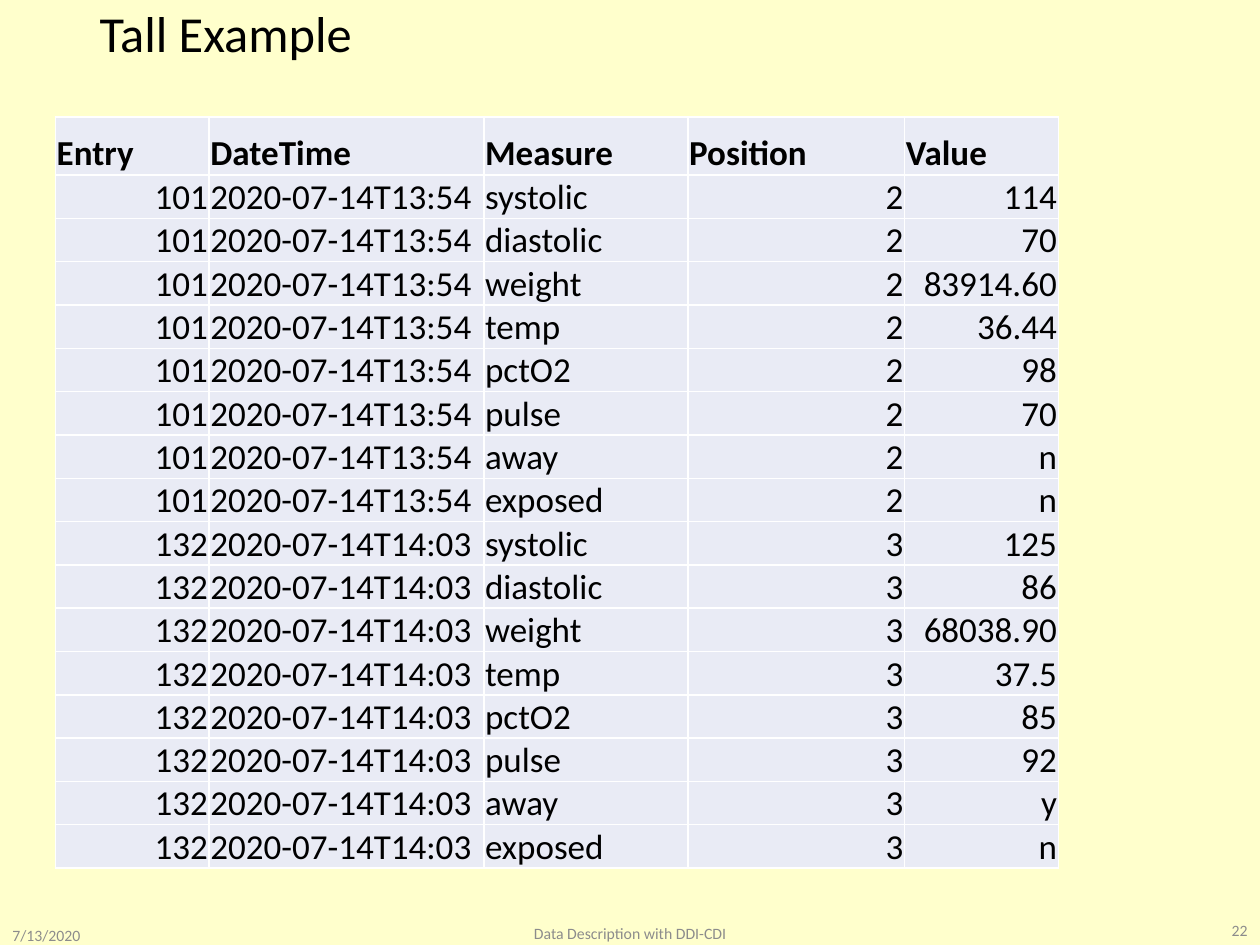
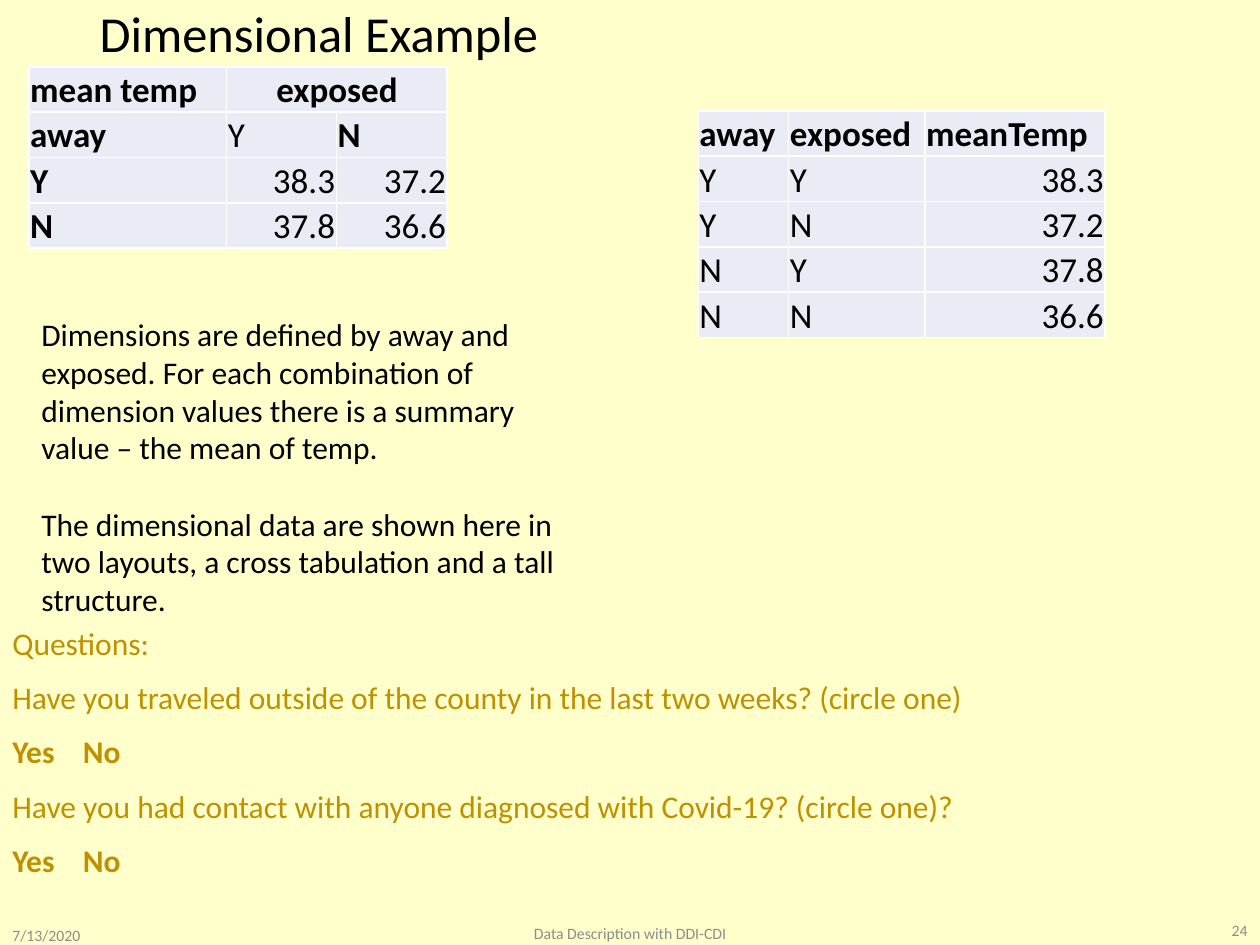
from dataclasses import dataclass
from itertools import product
from typing import Any, Callable, Optional

from lxml.etree import SubElement
from pptx import Presentation
from pptx.dml.color import RGBColor
from pptx.enum.text import MSO_ANCHOR as Anchor, MSO_AUTO_SIZE as AutoSize, PP_ALIGN as Align
from pptx.oxml.ns import qn
from pptx.util import Inches, Pt

FONT = "Calibri"
CREAM, BLACK, GREY, GOLD = "FFFFCC", "000000", "8C8C8C", "BF9000"
CELL_FILL, CELL_BORDER = "E9EBF5", "FFFFFF"
ALIGNMENTS = {"l": Align.LEFT, "c": Align.CENTER, "r": Align.RIGHT}
TITLE_AREA = (0.69, 0.04, 8.62, 0.49)
CELL_FORMAT = {
    "margin_left": Inches(0.01),
    "margin_right": Inches(0.01),
    "margin_top": Inches(0.01),
    "margin_bottom": 0,
    "vertical_anchor": Anchor.BOTTOM,
}
QUESTION_FORMAT = {"line_spacing": 1.07, "space_after": Pt(8)}
ANSWER_TAB = Inches(0.56)

Area = tuple[float, float, float, float]


@dataclass
class Line:
    text: str
    size: float = 18
    color: str = BLACK
    bold: bool = False
    align: str = "l"
    spacing: Optional[dict[str, Any]] = None


@dataclass
class Grid:
    left: float
    top: float
    columns: list[float]
    rows: list[list[str]]
    body_align: str
    row_height: float
    header_height: float
    is_bold: Callable[[int, int], bool] = lambda row, column: row == 0
    header_rows: int = 1
    header_span: Optional[tuple[int, int]] = None


def color_of(code: str) -> RGBColor:
    return RGBColor.from_string(code)


def apply_format(target: Any, values: dict[str, Any]) -> None:
    for name, value in values.items():
        setattr(target, name, value)


def write_line(para: Any, line: Line) -> None:
    apply_format(para, {"alignment": ALIGNMENTS[line.align], **(line.spacing or {})})
    span = para.add_run()
    span.text = line.text
    apply_format(span.font, {"name": FONT, "size": Pt(line.size), "bold": line.bold})
    span.font.color.rgb = color_of(line.color)
    if "\t" in line.text:
        tabs = SubElement(para._p.get_or_add_pPr(), qn("a:tabLst"))
        SubElement(tabs, qn("a:tab"), pos=str(ANSWER_TAB), algn="l")


def write_lines(frame: Any, lines: list[Line]) -> None:
    for index, line in enumerate(lines):
        write_line(frame.add_paragraph() if index else frame.paragraphs[0], line)


def add_text(page: Any, area: Area, lines: list[Line], **frame_format: Any) -> None:
    box = page.shapes.add_textbox(*map(Inches, area))
    apply_format(box.text_frame, {"word_wrap": True, **frame_format})
    write_lines(box.text_frame, lines)


def add_borders(cell: Any) -> None:
    properties = cell._tc.get_or_add_tcPr()
    for side in ("lnL", "lnR", "lnT", "lnB"):
        border = SubElement(properties, qn(f"a:{side}"), w=str(Pt(1)))
        fill = SubElement(border, qn("a:solidFill"))
        SubElement(fill, qn("a:srgbClr"), val=CELL_BORDER)


def add_grid(page: Any, grid: Grid) -> None:
    heights = [grid.header_height] + [grid.row_height] * (len(grid.rows) - 1)
    area = (grid.left, grid.top, sum(grid.columns), sum(heights))
    table = page.shapes.add_table(len(heights), len(grid.columns), *map(Inches, area)).table
    apply_format(table, {"first_row": False, "horz_banding": False})
    for column, width in zip(table.columns, grid.columns):
        column.width = Inches(width)
    for row, height in zip(table.rows, heights):
        row.height = Inches(height)
    if grid.header_span:
        first, last = grid.header_span
        table.cell(0, first).merge(table.cell(0, last))
    for row, column in product(range(len(heights)), range(len(grid.columns))):
        cell = table.cell(row, column)
        apply_format(cell, CELL_FORMAT)
        add_borders(cell)
        cell.fill.solid()
        cell.fill.fore_color.rgb = color_of(CELL_FILL)
        if cell.is_spanned:
            continue
        align = "l" if row < grid.header_rows else grid.body_align[column]
        if cell.is_merge_origin:
            align = "c"
        text = grid.rows[row][column]
        write_line(
            cell.text_frame.paragraphs[0],
            Line(text, 20, bold=grid.is_bold(row, column), align=align),
        )


def add_page(deck: Any, title: str, number: int) -> Any:
    page = deck.slides.add_slide(deck.slide_layouts[5])
    heading = page.shapes.title
    apply_format(heading, dict(zip(("left", "top", "width", "height"), map(Inches, TITLE_AREA))))
    apply_format(
        heading.text_frame,
        {"vertical_anchor": Anchor.MIDDLE, "auto_size": AutoSize.NONE, "word_wrap": True},
    )
    write_lines(heading.text_frame, [Line(title, 28.8, spacing={"line_spacing": 0.9})])
    footers = [
        ((0, 7.35, 1.17, 0.15), "7/13/2020", "l"),
        ((3.31, 7.33, 3.38, 0.15), "Data Description with DDI-CDI", "c"),
        ((9.11, 7.31, 0.89, 0.15), str(number), "r"),
    ]
    for area, text, align in footers:
        add_text(page, area, [Line(text, 9, GREY, align=align)], vertical_anchor=Anchor.MIDDLE)
    return page


def build_tall_page(deck: Any) -> None:
    page = add_page(deck, "Tall Example", 22)
    measures = ["systolic", "diastolic", "weight", "temp", "pctO2", "pulse", "away", "exposed"]
    visits = [
        ("101", "2020-07-14T13:54", "2", ["114", "70", "83914.60", "36.44", "98", "70", "n", "n"]),
        ("132", "2020-07-14T14:03", "3", ["125", "86", "68038.90", "37.5", "85", "92", "y", "n"]),
    ]
    rows = [["Entry", "DateTime", "Measure", "Position", "Value"]]
    for entry, moment, position, values in visits:
        rows += [[entry, moment, measure, position, value]
                 for measure, value in zip(measures, values)]
    add_grid(page, Grid(0.44, 0.93, [1.22, 2.18, 1.62, 1.72, 1.22], rows, "rllrr", 0.32, 0.46))


def build_dimensional_page(deck: Any) -> None:
    page = add_page(deck, "Dimensional Example", 24)
    levels = ["Y", "N"]
    means = [["38.3", "37.2"], ["37.8", "36.6"]]
    cross_rows = [["mean temp", "exposed", ""], ["away", *levels]]
    cross_rows += [[away, *values] for away, values in zip(levels, means)]
    add_grid(page, Grid(
        0.23, 0.53, [1.57, 0.87, 0.88], cross_rows, "lrr", 0.36, 0.36,
        is_bold=lambda row, column: row == 0 or column == 0 or (row, column) == (1, 2),
        header_rows=2, header_span=(1, 2),
    ))
    tall_rows = [["away", "exposed", "meanTemp"]]
    tall_rows += [[away, exposed, value]
                  for away, values in zip(levels, means)
                  for exposed, value in zip(levels, values)]
    add_grid(page, Grid(5.54, 0.88, [0.72, 1.08, 1.43], tall_rows, "llr", 0.36, 0.36))

    explanation = [
        Line("Dimensions are defined by away and exposed. For each combination of dimension "
             "values there is a summary value – the mean of temp.",
             spacing={"space_after": Pt(22)}),
        Line("The dimensional data are shown here in two layouts, a cross tabulation "
             "and a tall structure."),
    ]
    add_text(page, (0.23, 2.45, 4.54, 2.52), explanation, auto_size=AutoSize.SHAPE_TO_FIT_TEXT)

    questions = [Line("Questions:", color=GOLD, spacing=QUESTION_FORMAT)]
    for question in (
        "Have you traveled outside of the county in the last two weeks? (circle one)",
        "Have you had contact with anyone diagnosed with Covid-19? (circle one)?",
    ):
        questions.append(Line(question, color=GOLD, spacing=QUESTION_FORMAT))
        questions.append(Line("Yes\tNo", color=GOLD, bold=True, spacing=QUESTION_FORMAT))
    add_text(page, (0, 4.88, 10.21, 2.16), questions, auto_size=AutoSize.SHAPE_TO_FIT_TEXT)


def main() -> None:
    deck = Presentation()
    apply_format(deck, {"slide_width": Inches(10), "slide_height": Inches(7.5)})
    backdrop = deck.slide_master.background.fill
    backdrop.solid()
    backdrop.fore_color.rgb = color_of(CREAM)
    build_tall_page(deck)
    build_dimensional_page(deck)
    deck.save("out.pptx")


if __name__ == "__main__":
    main()
